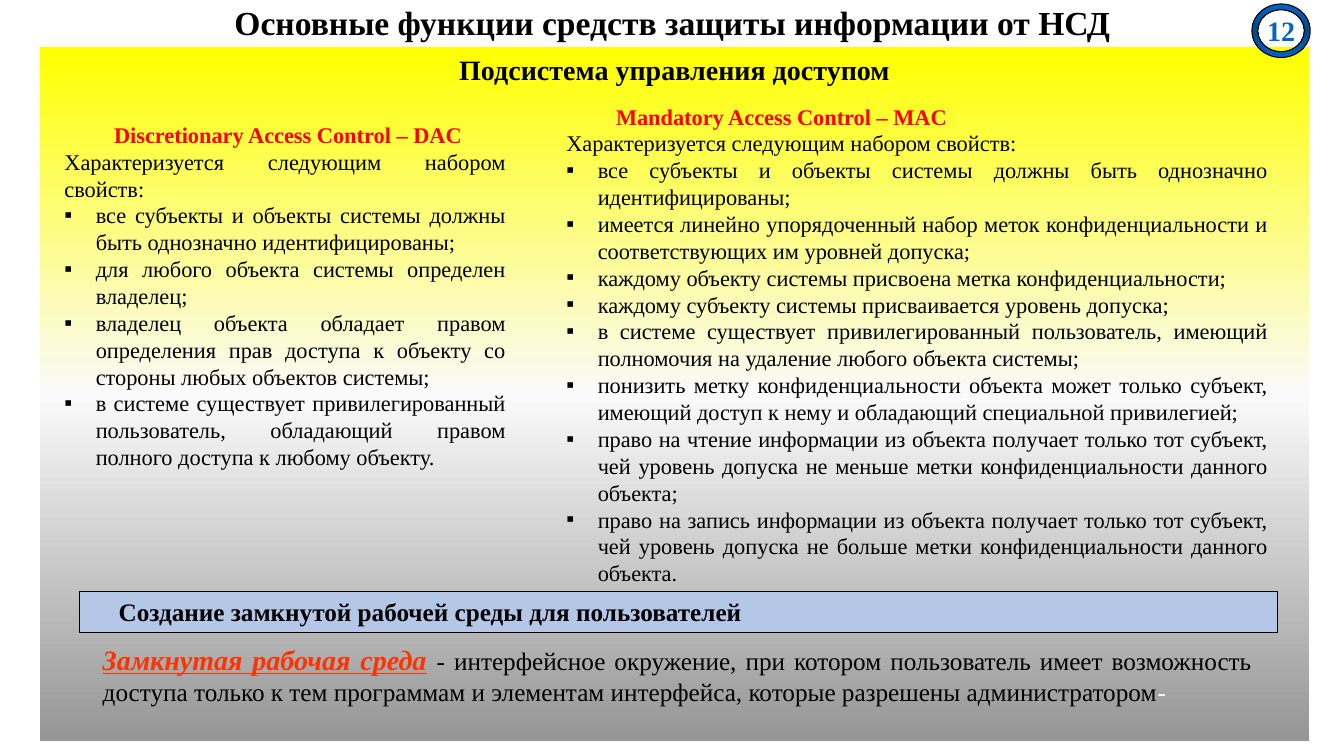
from copy import deepcopy
from dataclasses import dataclass

from lxml import etree
from pptx import Presentation
from pptx.dml.color import RGBColor
from pptx.enum.shapes import MSO_SHAPE
from pptx.enum.text import MSO_ANCHOR, MSO_AUTO_SIZE, PP_ALIGN
from pptx.oxml.ns import qn
from pptx.util import Cm, Pt

RECTANGLE, DONUT = MSO_SHAPE.RECTANGLE, MSO_SHAPE.DONUT
TOP, MIDDLE = MSO_ANCHOR.TOP, MSO_ANCHOR.MIDDLE
LEFT, CENTER, JUSTIFY = PP_ALIGN.LEFT, PP_ALIGN.CENTER, PP_ALIGN.JUSTIFY
NO_AUTOFIT = MSO_AUTO_SIZE.NONE
TWO_CONTENT_LAYOUT = 3


@dataclass(frozen=True)
class Theme:
    font: str = "Times New Roman"
    black: str = "000000"
    white: str = "FFFFFF"
    heading: str = "FF0000"
    term: str = "FF3300"
    bar: str = "B4C7E7"
    badge: str = "0563C1"
    panel_stops: tuple = ("FFFF00", "FAFAFA", "969696")
    badge_stops: tuple = ("0563C1", "04478A", "0563C1")
    title_size: int = 24
    subtitle_size: int = 20
    text_size: int = 18
    list_size: int = 16


THEME = Theme()

INTRO = "Характеризуется следующим набором свойств:"
IDENTIFIED = "все субъекты и объекты системы должны быть однозначно идентифицированы;"
DAC_ITEMS = [
    IDENTIFIED,
    "для любого объекта системы определен владелец;",
    "владелец объекта обладает правом определения прав доступа к объекту со стороны любых объектов системы;",
    "в системе существует привилегированный пользователь, обладающий правом полного доступа к любому объекту.",
]
MAC_ITEMS = [
    IDENTIFIED,
    "имеется линейно упорядоченный набор меток конфиденциальности и соответствующих им уровней допуска;",
    "каждому объекту системы присвоена метка конфиденциальности;",
    "каждому субъекту системы присваивается уровень допуска;",
    "в системе существует привилегированный пользователь, имеющий полномочия на удаление любого объекта системы;",
    "понизить метку конфиденциальности объекта может только субъект, имеющий доступ к нему и обладающий "
    "специальной привилегией;",
    "право на чтение информации из объекта получает только тот субъект, чей уровень допуска не меньше "
    "метки конфиденциальности данного объекта;",
    "право на запись информации из объекта получает только тот субъект, чей уровень допуска не больше "
    "метки конфиденциальности данного объекта.",
]
DEFINITION = (
    "- интерфейсное окружение, при котором пользователь имеет возможность доступа только к тем "
    "программам и элементам интерфейса, которые разрешены администратором"
)


def lengths(box):
    return [Cm(value) for value in box]


def place(shape, box):
    shape.left, shape.top, shape.width, shape.height = lengths(box)


def style_font(font, size, color=THEME.black, bold=False):
    font.name, font.size, font.bold = THEME.font, Pt(size), bold
    font.color.rgb = RGBColor.from_string(color)


def setup_frame(shape, anchor):
    frame = shape.text_frame
    frame.word_wrap = True
    frame.auto_size = NO_AUTOFIT
    frame.vertical_anchor = anchor
    return frame


def set_paragraph(paragraph, text, size, color=THEME.black, bold=False,
                  align=LEFT, margin=0, indent=0, bullet=None):
    """Fill one paragraph; margin and indent are in centimetres."""
    paragraph.text = text
    paragraph.alignment = align
    paragraph.space_before = Pt(0)
    properties = paragraph._p.get_or_add_pPr()
    properties.set("marL", str(Cm(margin)))
    properties.set("indent", str(Cm(indent)))
    if bullet:
        etree.SubElement(properties, qn("a:buChar")).set("char", bullet)
    else:
        etree.SubElement(properties, qn("a:buNone"))
    style_font(paragraph.font, size, color, bold)


def add_filled_shape(slide, kind, box, colors, outlined=True):
    """Draw a shape with one solid colour or a top-to-bottom gradient."""
    shape = slide.shapes.add_shape(kind, *lengths(box))
    shape.shadow.inherit = False
    if len(colors) == 1:
        shape.fill.solid()
        shape.fill.fore_color.rgb = RGBColor.from_string(colors[0])
    else:
        shape.fill.gradient()
        shape.fill.gradient_angle = 270
        stop_list = shape._element.spPr.find(".//" + qn("a:gsLst"))
        while len(stop_list) < len(colors):
            stop_list.append(deepcopy(stop_list[0]))
        for index, (stop, color) in enumerate(zip(shape.fill.gradient_stops, colors)):
            stop.position = index / (len(colors) - 1)
            stop.color.rgb = RGBColor.from_string(color)
    if outlined:
        shape.line.color.rgb = RGBColor.from_string(THEME.black)
        shape.line.width = Pt(0.75)
    else:
        shape.line.fill.background()
    return shape


def add_title(slide, box):
    title = slide.shapes.title
    place(title, box)
    paragraph = setup_frame(title, MIDDLE).paragraphs[0]
    set_paragraph(paragraph, "Основные функции средств защиты информации от НСД",
                  THEME.title_size, bold=True, align=CENTER)
    paragraph.line_spacing = 0.9


def add_panel(slide, box):
    panel = add_filled_shape(slide, RECTANGLE, box, THEME.panel_stops, outlined=False)
    set_paragraph(setup_frame(panel, TOP).paragraphs[0], "Подсистема управления доступом",
                  THEME.subtitle_size, bold=True, align=CENTER)
    # The panel lies behind the placeholders
    slide.shapes._spTree.insert(2, panel._element)


def add_access_model(placeholder, box, heading, items):
    place(placeholder, box)
    frame = setup_frame(placeholder, TOP)
    set_paragraph(frame.paragraphs[0], heading, THEME.list_size, THEME.heading,
                  bold=True, align=JUSTIFY, indent=1.25)
    set_paragraph(frame.add_paragraph(), INTRO, THEME.list_size, align=JUSTIFY)
    for item in items:
        set_paragraph(frame.add_paragraph(), item, THEME.list_size, align=JUSTIFY,
                      margin=0.79, indent=-0.79, bullet="▪")


def add_section_bar(slide, box):
    bar = add_filled_shape(slide, RECTANGLE, box, [THEME.bar])
    set_paragraph(setup_frame(bar, MIDDLE).paragraphs[0],
                  "Создание замкнутой рабочей среды для пользователей",
                  THEME.text_size, bold=True, indent=0.74)


def add_definition(slide, box):
    frame = setup_frame(slide.shapes.add_textbox(*lengths(box)), MIDDLE)
    paragraph = frame.paragraphs[0]
    paragraph.alignment = JUSTIFY
    parts = [
        ("Замкнутая рабочая среда", THEME.subtitle_size, THEME.term, True),
        (" ", THEME.subtitle_size, THEME.black, True),
        (DEFINITION, THEME.text_size, THEME.black, False),
        ("-", THEME.text_size, THEME.white, False),
    ]
    for text, size, color, bold in parts:
        run = paragraph.add_run()
        run.text = text
        style_font(run.font, size, color, bold)
    term = paragraph.runs[0].font
    term.italic = term.underline = True


def add_badge(slide, box):
    ring = add_filled_shape(slide, DONUT, box, THEME.badge_stops)
    ring.adjustments[0] = 0.11
    left, top, width, height = box
    inset = 0.25
    number_box = (left + inset, top + inset, width - 2 * inset, height - 2 * inset)
    frame = setup_frame(slide.shapes.add_textbox(*lengths(number_box)), MIDDLE)
    frame.margin_left = frame.margin_right = frame.margin_top = frame.margin_bottom = 0
    set_paragraph(frame.paragraphs[0], "12", THEME.subtitle_size, THEME.badge,
                  bold=True, align=CENTER)


def main():
    presentation = Presentation()
    presentation.slide_width, presentation.slide_height = Cm(33.87), Cm(19.05)
    slide = presentation.slides.add_slide(presentation.slide_layouts[TWO_CONTENT_LAYOUT])
    add_panel(slide, (1, 1.19, 32, 17.48))
    add_title(slide, (2.34, -0.1, 29.21, 1.45))
    add_access_model(slide.placeholders[1], (1.37, 2.92, 11.63, 9.14),
                     "Discretionary Access Control – DAC", DAC_ITEMS)
    add_access_model(slide.placeholders[2], (14.02, 2.46, 18.19, 12.57),
                     "Mandatory Access Control – MAC", MAC_ITEMS)
    add_section_bar(slide, (2, 14.91, 30.2, 1.02))
    add_definition(slide, (2.34, 16.05, 29.46, 1.88))
    add_badge(slide, (31.55, 0.1, 1.47, 1.35))
    presentation.save("out.pptx")


if __name__ == "__main__":
    main()
